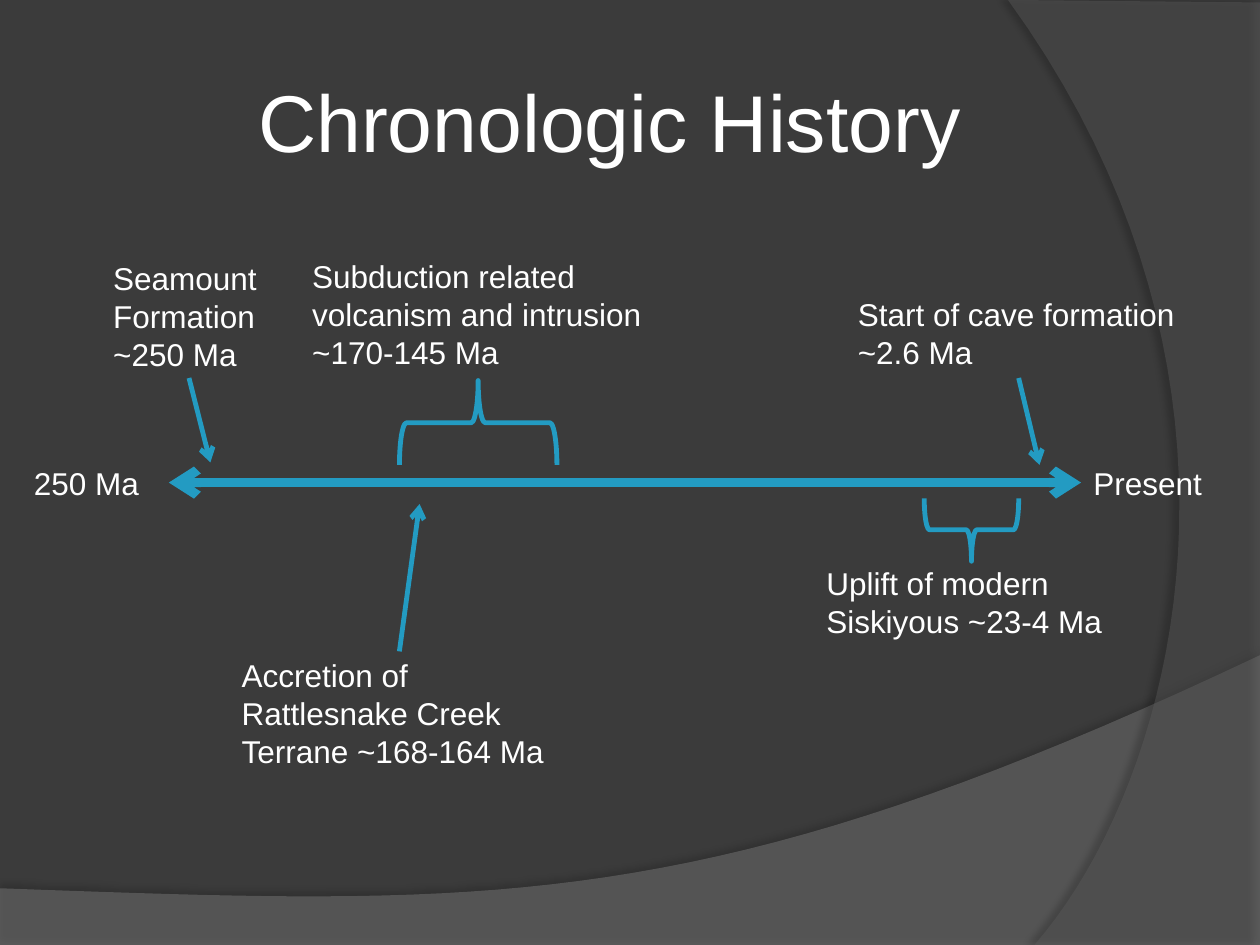
from lxml import etree
from pptx import Presentation
from pptx.dml.color import RGBColor
from pptx.enum.shapes import MSO_CONNECTOR, MSO_SHAPE
from pptx.enum.text import MSO_ANCHOR, MSO_AUTO_SIZE, PP_ALIGN
from pptx.oxml.ns import qn
from pptx.util import Inches, Pt

STRAIGHT = MSO_CONNECTOR.STRAIGHT
BRACE = MSO_SHAPE.RIGHT_BRACE
MIDDLE = MSO_ANCHOR.MIDDLE
CENTER = PP_ALIGN.CENTER
GROW = MSO_AUTO_SIZE.SHAPE_TO_FIT_TEXT
LEFT, BOTTOM, RIGHT = 1, 2, 3


def color(value):
    return RGBColor.from_string(value)


def element(parent, tag, **values):
    return etree.SubElement(parent, qn(tag), {key: str(value) for key, value in values.items()})


def curve(start, first, second, end, steps=40):
    points = []
    for step in range(1, steps + 1):
        t = step / steps
        weights = ((1 - t) ** 3, 3 * t * (1 - t) ** 2, 3 * t * t * (1 - t), t ** 3)
        controls = (start, first, second, end)
        points.append(tuple(sum(w * p[axis] for w, p in zip(weights, controls)) for axis in (0, 1)))
    return points


class TimelinePage:
    """Holds the style and the current slide, and draws each kind of element."""

    font, ink, accent, background = "Arial", "FFFFFF", "239BC2", "3B3B3B"

    def __init__(self, deck):
        self.page = deck.slides.add_slide(deck.slide_layouts[5])
        fill = self.page.background.fill
        fill.solid()
        fill.fore_color.rgb = color(self.background)

    def fill_text(self, box, text, size, frame_format, align=None):
        frame = box.text_frame
        for name, value in frame_format.items():
            setattr(frame, name, value)
        para = frame.paragraphs[0]
        para.alignment = align
        span = para.add_run()
        span.text = text
        for name, value in {"name": self.font, "size": Pt(size), "bold": False}.items():
            setattr(span.font, name, value)
        span.font.color.rgb = color(self.ink)

    def title(self, text, left, top, width, height):
        box = self.page.shapes.title
        place = {"left": left, "top": top, "width": width, "height": height}
        for name, value in place.items():
            setattr(box, name, Inches(value))
        margins = {f"margin_{side}": Inches(0.05) for side in ("left", "top", "right", "bottom")}
        self.fill_text(box, text, 46, {"vertical_anchor": MIDDLE, "word_wrap": True, **margins}, CENTER)

    def label(self, text, left, top, width, height):
        box = self.page.shapes.add_textbox(*map(Inches, (left, top, width, height)))
        self.fill_text(box, text, 18, {"word_wrap": True, "auto_size": GROW})
        return box

    def outline(self, shape, weight):
        shape.line.color.rgb = color(self.accent)
        shape.line.width = Pt(weight)

    def arrow(self, start, end, weight=2.75, both=False):
        line = self.page.shapes.add_connector(STRAIGHT, *map(Inches, (*start, *end)))
        self.outline(line, weight)
        properties = line._element.spPr.find(qn("a:ln"))
        for tag in ("a:headEnd", "a:tailEnd") if both else ("a:tailEnd",):
            element(properties, tag, type="arrow")
        element(line._element.spPr, "a:effectLst")
        return line

    def brace(self, left, top, width, height, rotation):
        shape = self.page.shapes.add_shape(BRACE, *map(Inches, (left, top, width, height)))
        shape.fill.background()
        shape.shadow.inherit = False
        shape.rotation = rotation
        self.outline(shape, 2.75)

    def wave(self, points, fill, opacity, shade, distance, direction, layer):
        first, *rest = [tuple(map(Inches, point)) for point in points]
        builder = self.page.shapes.build_freeform(*first, scale=1.0)
        builder.add_line_segments(rest, close=True)
        shape = builder.convert_to_shape()
        shape.fill.solid()
        shape.fill.fore_color.rgb = color(fill)
        shape.line.fill.background()
        shape.shadow.inherit = False
        properties = shape._element.spPr
        paint = properties.find(qn("a:solidFill")).find(qn("a:srgbClr"))
        element(paint, "a:alpha", val=opacity * 1000)
        shadow = element(properties.find(qn("a:effectLst")), "a:outerShdw", blurRad=Pt(4),
                         dist=Pt(distance), dir=direction * 60000, algn="ctr", rotWithShape=0)
        element(element(shadow, "a:srgbClr", val="000000"), "a:alpha", val=shade * 1000)
        self.page.shapes._spTree.insert(2 + layer, shape._element)


def main():
    deck = Presentation()
    deck.slide_width, deck.slide_height = Inches(10), Inches(7.5)
    page = TimelinePage(deck)

    floor = [(0, 7.05), (0, 7.51), (10, 7.51), (10, 5.2)]
    floor += curve(floor[-1], (5.59, 7.29), (3.91, 7.19), floor[0])
    page.wave(floor, "7F7F7F", 45, 35, 3.5, 270, layer=0)
    side = [(10, 0.02), (10, 7.5), (8.21, 7.5)]
    side += curve(side[-1], (9.35, 6.19), (10.18, 3), (8, 0))
    page.wave(side, "5E5E5E", 40, 45, 4, 180, layer=1)

    page.title("Chronologic History", 0.75, 0.33, 8.17, 1.25)

    spine = page.arrow((1.33, 3.83), (8.58, 3.83), 5.25, both=True)
    page.arrow((1.5, 3), (1.67, 3.67))
    page.arrow((3.17, 5.17), (3.33, 4))
    page.brace(3.46, 2.73, 0.67, 1.25, 270)
    page.brace(7.46, 3.83, 0.5, 0.75, 90)
    cave_arrow = page.arrow((8.08, 3.02), (8.25, 3.69))

    oldest = page.label("250 Ma", 0.17, 3.63, 1.17, 0.4)
    present = page.label("Present", 8.58, 3.63, 1.17, 0.4)
    events = [
        ("Seamount Formation ~250 Ma", 0.8, 2.01, 1.51, 1.01),
        ("Subduction related volcanism and intrusion ~170-145 Ma", 2.38, 1.99, 2.83, 1.01),
        ("Accretion of Rattlesnake Creek Terrane ~168-164 Ma", 1.82, 5.16, 2.86, 1.01),
        ("Uplift of modern Siskiyous ~23-4 Ma", 6.46, 4.43, 2.5, 0.71),
    ]
    for event in events:
        page.label(*event)
    cave = page.label("Start of cave formation ~2.6 Ma", 6.71, 2.29, 2.75, 0.71)

    spine.begin_connect(oldest, RIGHT)
    spine.end_connect(present, LEFT)
    cave_arrow.begin_connect(cave, BOTTOM)
    deck.save("out.pptx")


if __name__ == "__main__":
    main()
